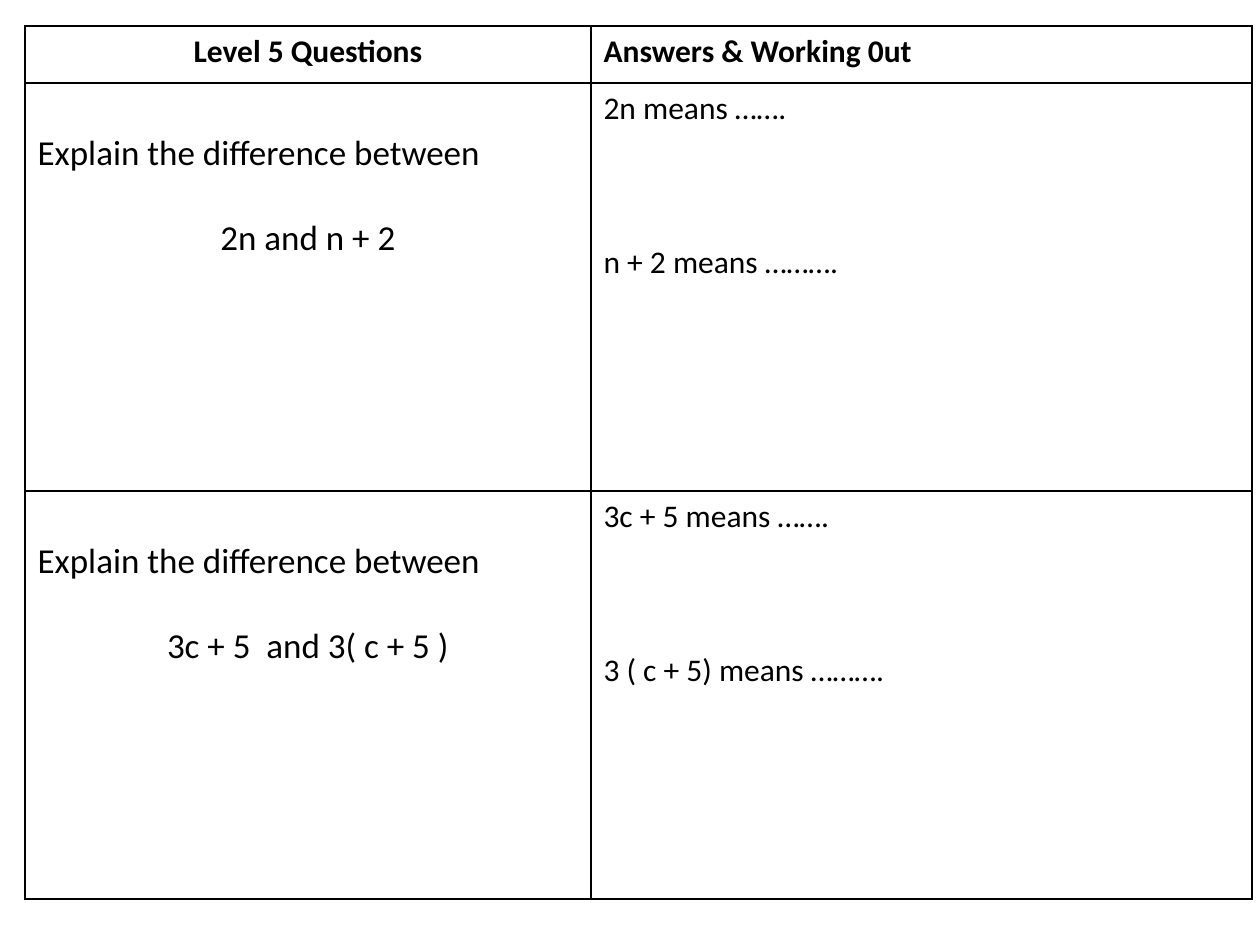
from lxml.etree import SubElement
from pptx import Presentation
from pptx.dml.color import RGBColor
from pptx.enum.text import PP_ALIGN
from pptx.oxml.ns import qn
from pptx.util import Pt

THEME = {
    "font": "Calibri",
    "ink": "000000",
    "question_size": 20,
    "answer_size": 18,
    "border_width": 1,
    "line_height": 1.22,
}
SLIDE = (1260, 945)
TABLE_AT = (25, 26)
COLUMNS = (566, 661)
HEADER_HEIGHT = 57
ROW_HEIGHT = 408
MARGIN = 6

HEADERS = ("Level 5 Questions", "Answers & Working 0ut")
PROMPT = "Explain the difference between"
EXERCISES = [
    ("2n and n + 2", "2n means …….", "n + 2 means ………."),
    ("3c + 5  and 3( c + 5 )", "3c + 5 means …….", "3 ( c + 5) means ………."),
]


def px(length):
    return round(length * 914400 / 126)


def line_gap(size, lines):
    return Pt(round(size * THEME["line_height"] * lines, 1))


def draw_borders(cell):
    properties = cell._tc.get_or_add_tcPr()
    for position, side in enumerate(("a:lnL", "a:lnR", "a:lnT", "a:lnB")):
        line = SubElement(properties, qn(side), w=str(Pt(THEME["border_width"])))
        fill = SubElement(line, qn("a:solidFill"))
        SubElement(fill, qn("a:srgbClr"), val=THEME["ink"])
        properties.insert(position, line)


def write_cell(cell, lines, size, gap=0, bold=False, centred=None):
    cell.fill.background()
    draw_borders(cell)
    frame = cell.text_frame
    for index, text in enumerate(lines):
        para = frame.add_paragraph() if index else frame.paragraphs[0]
        para.text = text
        para.alignment = PP_ALIGN.CENTER if index == centred else PP_ALIGN.LEFT
        if index:
            para.space_before = line_gap(size, gap)
        para.font.name = THEME["font"]
        para.font.size = Pt(size)
        para.font.bold = bold
        para.font.color.rgb = RGBColor.from_string(THEME["ink"])


def main():
    deck = Presentation()
    deck.slide_width, deck.slide_height = map(px, SLIDE)
    page = deck.slides.add_slide(deck.slide_layouts[6])

    heights = [HEADER_HEIGHT] + [ROW_HEIGHT] * len(EXERCISES)
    table = page.shapes.add_table(
        len(heights), len(COLUMNS), *map(px, (*TABLE_AT, sum(COLUMNS), sum(heights)))
    ).table
    table.first_row = table.horz_banding = False
    for column, width in zip(table.columns, COLUMNS):
        column.width = px(width)
    for row, height in zip(table.rows, heights):
        row.height = px(height)

    question_size, answer_size = THEME["question_size"], THEME["answer_size"]
    for index, header in enumerate(HEADERS):
        write_cell(table.cell(0, index), [header], answer_size, bold=True, centred=0 if index == 0 else None)
    for row, (expressions, *answers) in enumerate(EXERCISES, 1):
        question = table.cell(row, 0)
        question.margin_top = px(MARGIN) + line_gap(question_size, 1)
        write_cell(question, [PROMPT, expressions], question_size, gap=1, centred=1)
        write_cell(table.cell(row, 1), answers, answer_size, gap=3)

    deck.save("out.pptx")


if __name__ == "__main__":
    main()
